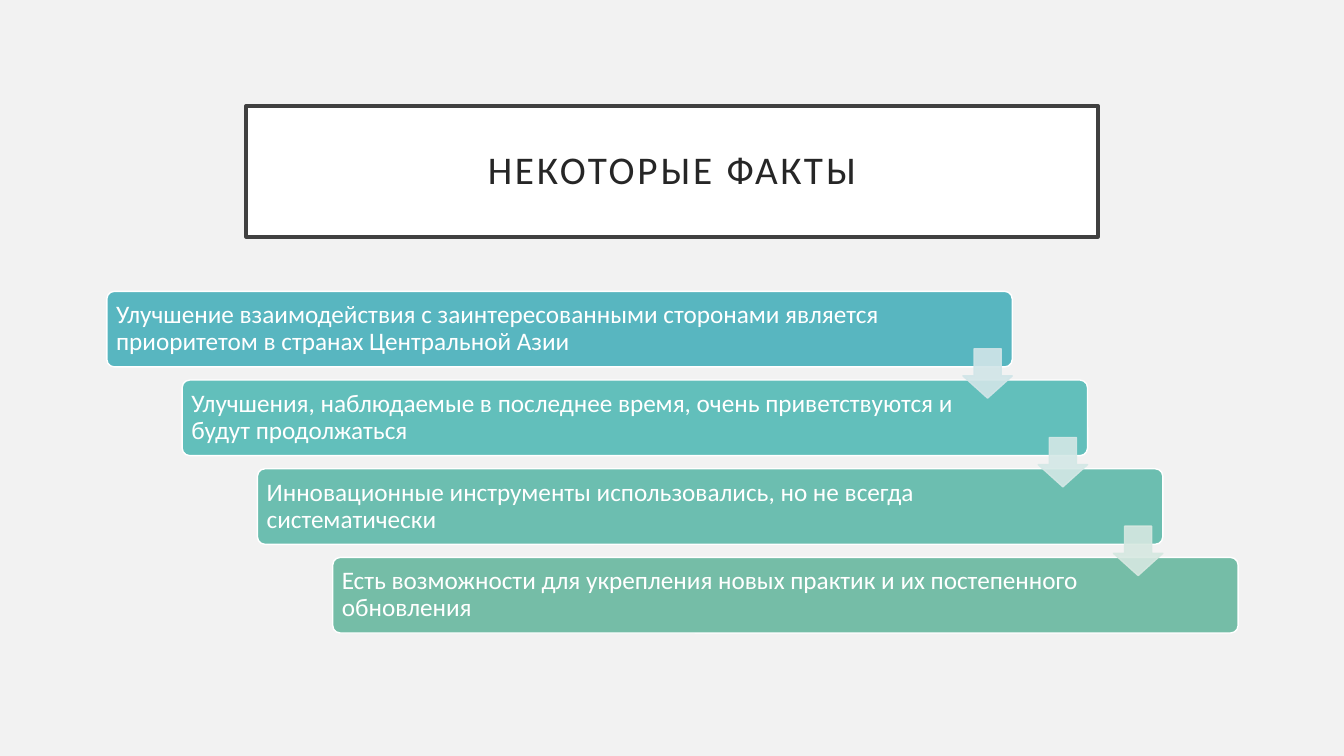
"""Build a slide with a staircase of four facts linked by arrows."""
from lxml.etree import SubElement
from pptx import Presentation
from pptx.dml.color import RGBColor as RGB
from pptx.enum.shapes import MSO_SHAPE as Kind
from pptx.enum.text import MSO_ANCHOR as Anchor, MSO_AUTO_SIZE as Auto, PP_ALIGN as Align
from pptx.oxml.ns import qn
from pptx.util import Inches, Pt

TITLE = "НЕКОТОРЫЕ ФАКТЫ"
WHITE = RGB(0xFF, 0xFF, 0xFF)
PAPER = RGB(0xF2, 0xF2, 0xF2)
FRAME = RGB(0x40, 0x40, 0x40)
INK = RGB(0x26, 0x26, 0x26)
FACTS = [
    ("Улучшение взаимодействия с заинтересованными сторонами является "
     "приоритетом в странах Центральной Азии", RGB(0x58, 0xB6, 0xC0), 0.9),
    ("Улучшения, наблюдаемые в последнее время, очень приветствуются "
     "и будут продолжаться", RGB(0x62, 0xBF, 0xBB), 1.31),
    ("Инновационные инструменты использовались, но не всегда "
     "систематически", RGB(0x6C, 0xBE, 0xB0), 1.31),
    ("Есть возможности для укрепления новых практик и их постепенного "
     "обновления", RGB(0x75, 0xBD, 0xA7), 1.31),
]
ARROWS = [RGB(0xD1, 0xE5, 0xE8), RGB(0xD4, 0xE8, 0xE6), RGB(0xD6, 0xE8, 0xE1)]

WIDE, HIGH = 13.33, 7.5
BAR_W, BAR_H = 8.98, 0.75
LEFT, TOP = 1.06, 2.89
STEP_X = (WIDE - 2 * LEFT - BAR_W + 0.01) / (len(FACTS) - 1)
STEP_Y = 0.88
ARROW, DROP = 0.49, 0.57


def paint(shape, fill, edge, width):
    shape.shadow.inherit = False
    shape.fill.solid()
    shape.fill.fore_color.rgb = fill
    shape.line.color.rgb = edge
    shape.line.width = Pt(width)


def write(shape, text, size, color, align, pads):
    frame = shape.text_frame
    frame.text = text
    frame.word_wrap = True
    frame.auto_size = Auto.NONE
    frame.vertical_anchor = Anchor.MIDDLE
    (frame.margin_left, frame.margin_top,
     frame.margin_right, frame.margin_bottom) = map(Inches, pads)
    para = frame.paragraphs[0]
    para.alignment = align
    para.line_spacing = 0.9
    para.font.name = "Calibri"
    para.font.size = Pt(size)
    para.font.color.rgb = color
    return para


def add(slide, kind, x, y, w, h, adjust):
    shape = slide.shapes.add_shape(kind, *map(Inches, (x, y, w, h)))
    for i, share in enumerate(adjust):
        shape.adjustments[i] = share
    return shape


def main():
    deck = Presentation()
    deck.slide_width, deck.slide_height = Inches(WIDE), Inches(HIGH)
    slide = deck.slides.add_slide(deck.slide_layouts[5])
    slide.background.fill.solid()
    slide.background.fill.fore_color.rgb = PAPER

    title = slide.shapes.title
    title.left, title.top, title.width, title.height = map(
        Inches, (2.44, 1.05, WIDE - 2 * 2.44, 1.3))
    paint(title, WHITE, FRAME, 2.5)
    para = write(title, TITLE, 28, INK, Align.CENTER, [0.2] * 4)
    para.runs[0].font._element.set("spc", "200")

    for i, (text, color, pad) in enumerate(FACTS):
        bar = add(slide, Kind.ROUNDED_RECTANGLE, LEFT + i * STEP_X,
                  TOP + i * STEP_Y, BAR_W, BAR_H, [0.1])
        paint(bar, color, WHITE, 1)
        write(bar, text, 18, WHITE, Align.LEFT, (0.07, 0.07, pad, 0.07))

    for i, color in enumerate(ARROWS):
        arrow = add(slide, Kind.DOWN_ARROW, LEFT + BAR_W - ARROW + i * STEP_X,
                    TOP + DROP + i * STEP_Y, ARROW, ARROW, [0.55, 0.45])
        paint(arrow, color, color, 1)
        for tint in arrow._element.spPr.iter(qn("a:srgbClr")):
            SubElement(tint, qn("a:alpha"), val="90000")

    deck.save("out.pptx")


if __name__ == "__main__":
    main()
